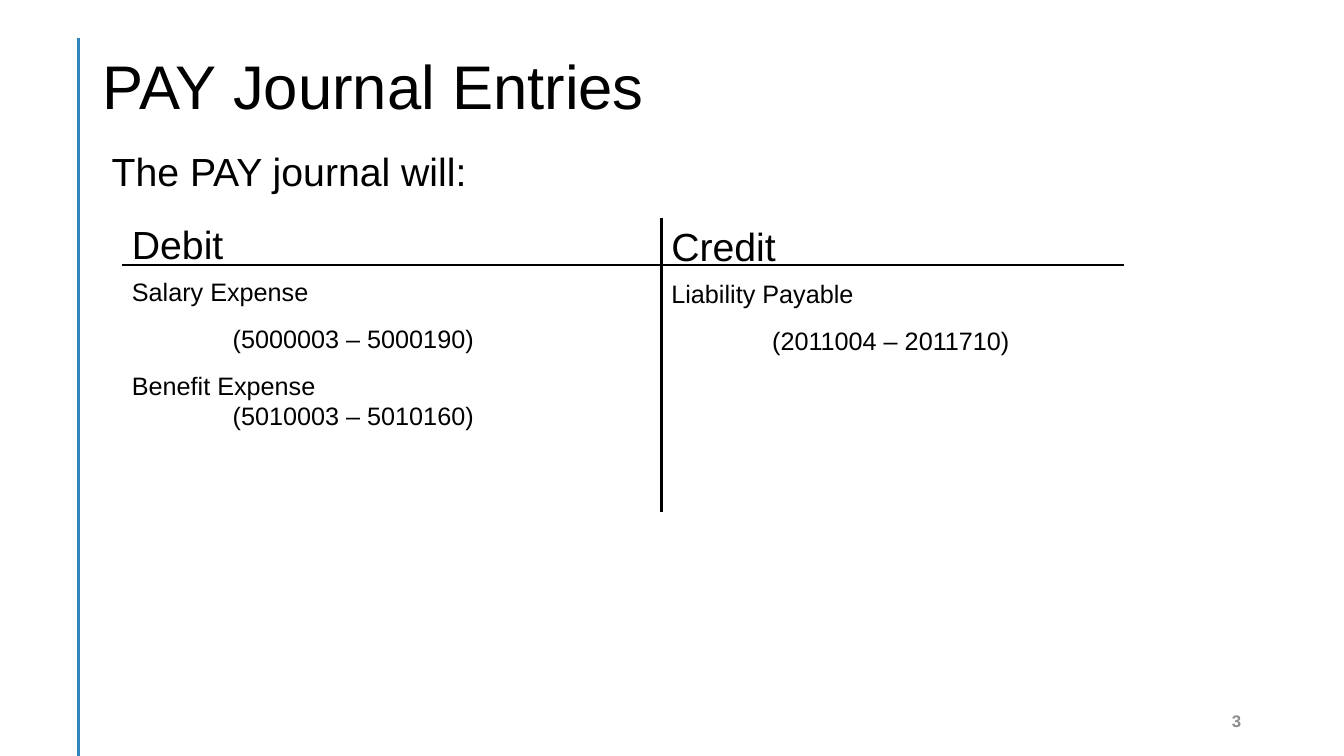
"""Build the PAY journal entries slide with its debit and credit T-account."""
from lxml import etree
from pptx import Presentation
from pptx.dml.color import RGBColor
from pptx.enum.shapes import MSO_CONNECTOR
from pptx.enum.text import MSO_ANCHOR, PP_ALIGN
from pptx.oxml.ns import qn
from pptx.util import Inches, Pt

LINE = MSO_CONNECTOR.STRAIGHT
TOP, MIDDLE = MSO_ANCHOR.TOP, MSO_ANCHOR.MIDDLE
LEFT, RIGHT = PP_ALIGN.LEFT, PP_ALIGN.RIGHT
INK = {"text": "000000", "rule": "2E86BD", "page": "8C8C8C"}
HEAD = {"size": Pt(28)}
ITEM = {"size": Pt(18)}
GAP = {"space_after": Pt(12)}
FIRST = {"space_before": Pt(6), **GAP}


class Deck:
    """Hold the font, the colours and the current slide."""

    def __init__(self, font, ink):
        self.font, self.ink = font, ink
        self.prs = Presentation()
        self.prs.slide_width, self.prs.slide_height = Inches(13.33), Inches(7.5)
        self.slide = self.prs.slides.add_slide(self.prs.slide_layouts[5])

    def color(self, name):
        return RGBColor.from_string(self.ink[name])

    def apply(self, item, look):
        for name, value in look.items():
            setattr(item, name, value)

    def fill(self, shape, rows, anchor=TOP, ink="text"):
        frame = shape.text_frame
        self.apply(frame, {"word_wrap": True, "vertical_anchor": anchor})
        for i, (text, font, para) in enumerate(rows):
            line = frame.add_paragraph() if i else frame.paragraphs[0]
            self.apply(line, {"alignment": LEFT, **para})
            line._p.get_or_add_pPr().set("defTabSz", str(Inches(1)))
            run = line.add_run()
            run.text = text
            self.apply(run.font, {"name": self.font, **font})
            run.font.color.rgb = self.color(ink)

    def title(self, box, text):
        shape = self.slide.shapes.title
        sides = ("left", "top", "width", "height")
        self.apply(shape, dict(zip(sides, map(Inches, box))))
        self.fill(shape, [(text, {"size": Pt(44)}, {"line_spacing": 0.9})], MIDDLE)

    def text(self, box, rows, **look):
        self.fill(self.slide.shapes.add_textbox(*map(Inches, box)), rows, **look)

    def line(self, ends, ink="text", width=2):
        rule = self.slide.shapes.add_connector(LINE, *map(Inches, ends))
        rule.line.color.rgb = self.color(ink)
        rule.line.width = Pt(width)
        etree.SubElement(rule._element.spPr, qn("a:effectLst"))


def main():
    deck = Deck("Arial", INK)
    deck.line((0.78, 0.38, 0.78, 7.5), "rule")
    deck.title((0.92, 0.4, 11.5, 0.97), "PAY Journal Entries")
    deck.text((1.01, 1.41, 6.26, 0.57), [("The PAY journal will:", HEAD, {})])

    start, stem, end, bar = 1.21, 6.56, 11.15, 2.63
    sides = [
        (start, 2.14, stem, "Debit", [
            ("Salary Expense", ITEM, FIRST),
            ("\t(5000003 – 5000190)", ITEM, GAP),
            ("Benefit Expense", ITEM, {}),
            ("\t(5010003 – 5010160)", ITEM, {}),
        ]),
        (stem, 2.16, end, "Credit", [
            ("Liability Payable", ITEM, FIRST),
            ("\t(2011004 – 2011710)", ITEM, GAP),
        ]),
    ]
    for left, top, right, name, rows in sides:
        deck.text((left, top, right - left, 2.81), [(name, HEAD, {}), *rows])
        deck.line((left, bar, right, bar), width=1.5)
    deck.line((stem, 2.16, stem, 5.08))

    page = ("3", {"size": Pt(12), "bold": True}, {"alignment": RIGHT})
    deck.text((9.41, 6.95, 3, 0.4), [page], anchor=MIDDLE, ink="page")
    deck.prs.save("out.pptx")


if __name__ == "__main__":
    main()
